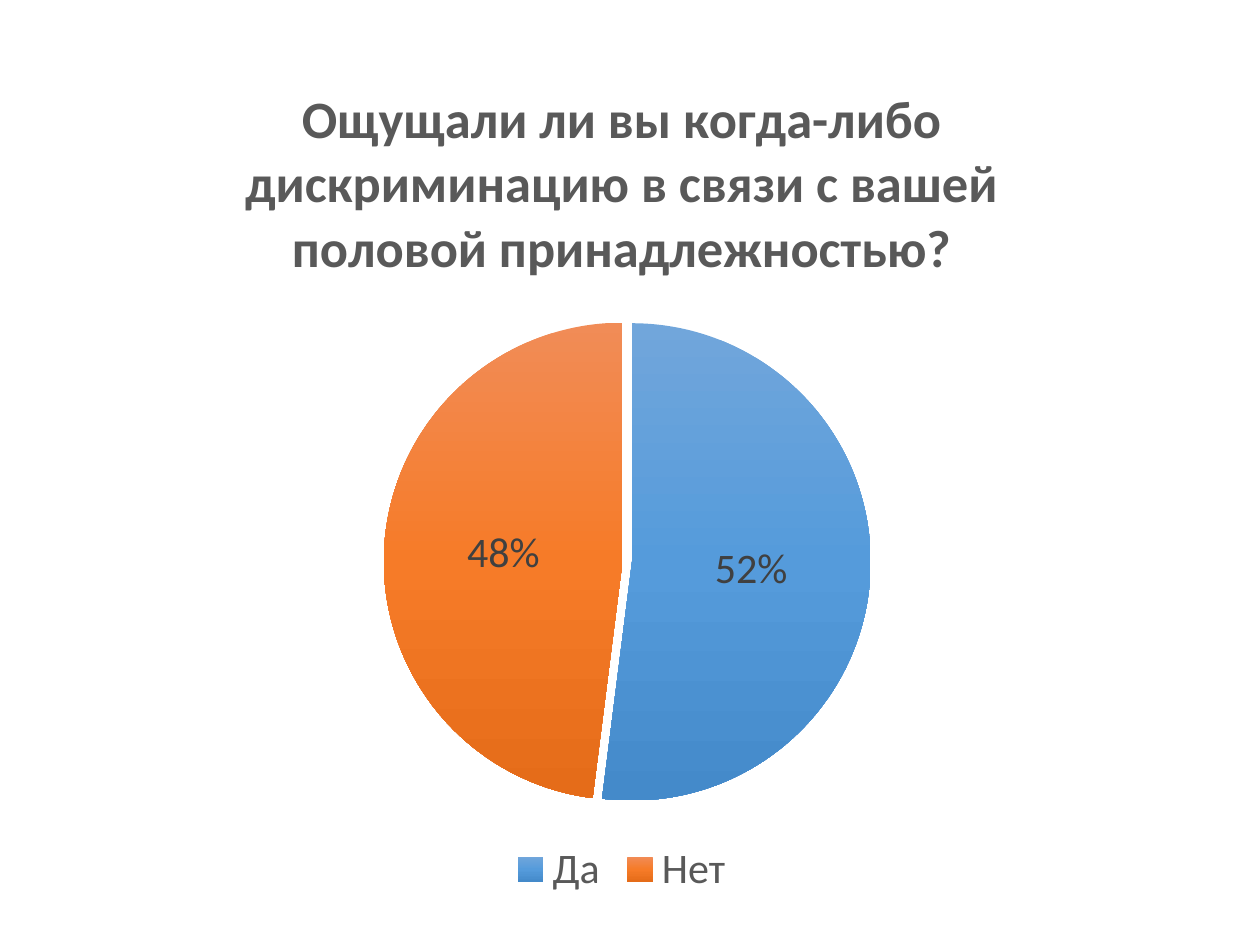
from copy import deepcopy
from dataclasses import dataclass

from pptx import Presentation
from pptx import util as u
from pptx.chart.data import CategoryChartData
from pptx.dml.color import RGBColor
from pptx.enum import chart as ch
from pptx.oxml import parse_xml
from pptx.oxml.ns import nsdecls

FONT = "Calibri"
QUESTION = ("Ощущали ли вы когда-либо дискриминацию в связи "
            "с вашей половой принадлежностью?")
GREY = RGBColor(0x59, 0x59, 0x59)
DARK = RGBColor(0x40, 0x40, 0x40)
BLUES = (RGBColor(0x71, 0xA6, 0xDB), RGBColor(0x55, 0x9B, 0xDB),
         RGBColor(0x44, 0x8A, 0xCA))
ORANGES = (RGBColor(0xF1, 0x8C, 0x57), RGBColor(0xF6, 0x7B, 0x28),
           RGBColor(0xE5, 0x6C, 0x19))
PIE_LEFT, PIE_MIDDLE, PIE_WIDTH, PIE_HEIGHT = 0.28, 0.6, 0.45, 0.57


@dataclass(frozen=True)
class Answer:
    label: str
    percent: int
    shades: tuple[RGBColor, RGBColor, RGBColor]


ANSWERS = (Answer("Да", 52, BLUES), Answer("Нет", 48, ORANGES))


def style(font, *, size: float, color: RGBColor, bold: bool = False) -> None:
    font.name, font.size, font.bold = FONT, u.Pt(size), bold
    font.color.rgb = color


def add_title(chart, text: str, **fmt) -> None:
    tf = chart.chart_title.text_frame
    r = tf.paragraphs[0].add_run()
    r.text = text
    style(r.font, **fmt)
    chart.chart_title.include_in_layout = False


def shade(chart, point, shades: tuple[RGBColor, ...]) -> None:
    """Fill the newest slice with a top-to-bottom gradient of three shades."""
    fill = point.format.fill
    fill.gradient()
    stops = chart._chartSpace.xpath(".//a:gsLst")[-1]
    stops.append(deepcopy(stops[-1]))
    fill.gradient_angle = 270
    for i, (stop, color) in enumerate(zip(fill.gradient_stops, shades)):
        stop.color.rgb = color
        stop.position = i / 2
    point.format.line.fill.background()


def place_plot(chart, **shares: float) -> None:
    """Fix the plot's place in shares of the chart's size."""
    area = chart._chartSpace.xpath(".//c:plotArea")[0]
    for old in area.xpath("./c:layout"):
        area.remove(old)
    sizes = "".join(f'<c:{k} val="{v}"/>' for k, v in shares.items())
    area.insert(0, parse_xml(
        f'<c:layout {nsdecls("c")}><c:manualLayout>'
        '<c:layoutTarget val="inner"/><c:xMode val="edge"/>'
        f'<c:yMode val="edge"/>{sizes}</c:manualLayout></c:layout>'))


def add_pie(s, width: int, height: int) -> None:
    data = CategoryChartData(number_format="0")
    data.categories = [a.label for a in ANSWERS]
    data.add_series(QUESTION, [a.percent for a in ANSWERS])
    chart = s.shapes.add_chart(
        ch.XL_CHART_TYPE.PIE, int(width * 0.056), int(height * 0.052),
        int(width * 0.875), int(height * 0.904), data).chart
    chart.font.name, chart.font.size = FONT, u.Pt(10)
    add_title(chart, QUESTION, size=30, color=GREY, bold=True)

    chart.has_legend = True
    chart.legend.position = ch.XL_LEGEND_POSITION.BOTTOM
    chart.legend.include_in_layout = False
    style(chart.legend.font, size=24, color=GREY)

    plot = chart.plots[0]
    plot.vary_by_categories = True
    series = plot.series[0]
    for i, answer in enumerate(ANSWERS):
        shade(chart, series.points[i], answer.shades)
    first_slice = chart._chartSpace.xpath(".//c:dPt")[0]
    first_slice.addprevious(
        parse_xml(f'<c:explosion {nsdecls("c")} val="2"/>'))

    labels = series.data_labels
    labels.show_percentage, labels.show_value = True, False
    labels.number_format, labels.number_format_is_linked = "0%", False
    labels.position = ch.XL_LABEL_POSITION.CENTER
    style(labels.font, size=24, color=DARK)

    place_plot(chart, x=PIE_LEFT, y=PIE_MIDDLE - PIE_HEIGHT / 2,
               w=PIE_WIDTH, h=PIE_HEIGHT)


def main() -> None:
    prs = Presentation()
    prs.slide_width, prs.slide_height = u.Inches(10), u.Inches(7.5)
    s = prs.slides.add_slide(prs.slide_layouts[6])
    add_pie(s, prs.slide_width, prs.slide_height)
    prs.save("out.pptx")


if __name__ == "__main__":
    main()
